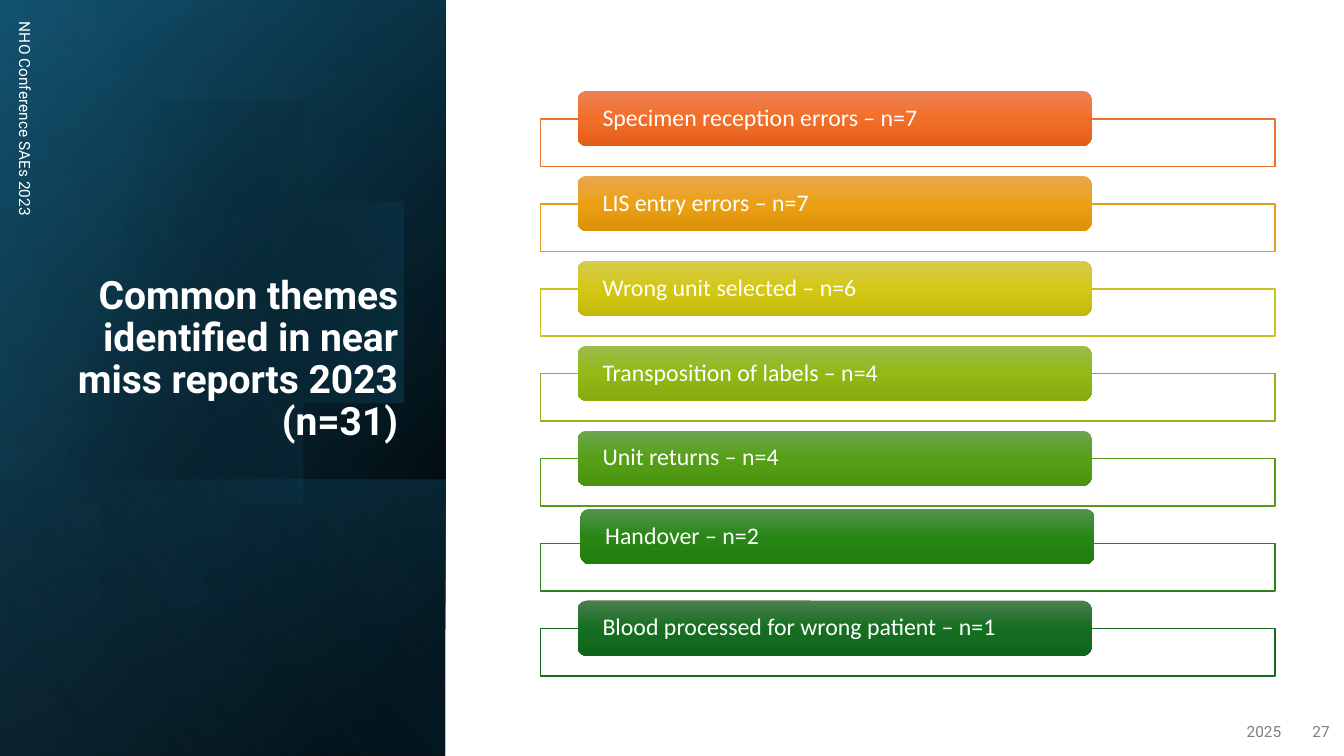
from math import acos, cos, sin
from pptx import Presentation
from pptx.dml.color import RGBColor
from pptx.enum.shapes import MSO_SHAPE
from pptx.enum.text import MSO_ANCHOR, PP_ALIGN
from pptx.oxml import parse_xml
from pptx.oxml.ns import nsdecls
from pptx.util import Inches, Pt

WIDE, HIGH = Inches(13.33), Inches(7.5)
PANEL = (0, 0, 33.15, 100)
FOOT = (0, 63.47, 33.15, 36.53)
PITCH = 11.24  # row step, in percent of the slide height

THEMES = [
    ("Specimen reception errors – n=7", "E97132", ("ED8257", "F26E29", "E25F1A")),
    ("LIS entry errors – n=7", "E39D1F", ("E8A74F", "ECA015", "DD9108")),
    ("Wrong unit selected – n=6", "CBC11E", ("D5CB4E", "D4C815", "C4B90B")),
    ("Transposition of labels – n=4", "8EB21E", ("9CBD4E", "92B916", "85AB0D")),
    ("Unit returns – n=4", "56991D", ("6DA64E", "56A017", "4C930F")),
    ("Handover – n=2", "2C821B", ("53914E", "298716", "217C0F")),
    ("Blood processed for wrong patient – n=1", "196B24", ("4D7E50", "156F21", "0F661B")),
]
NUDGE = {"Handover – n=2": (0.2, -0.9)}


def tint(code):
    return RGBColor.from_string(code)


def frame(box, turned=False):
    """Turn a box in percent of the slide into lengths, before a quarter turn if turned."""
    x, y, w, h = box
    left, top = WIDE * x / 100, HIGH * y / 100
    width, height = WIDE * w / 100, HIGH * h / 100
    if turned:
        left, top = left + (width - height) / 2, top + (height - width) / 2
        width, height = height, width
    return [round(n) for n in (left, top, width, height)]


def blend(shape, stops, angle):
    """Fill with a gradient of (place, colour, opacity) stops, all in percent."""
    marks = "".join(
        f'<a:gs pos="{place * 1000}"><a:srgbClr val="{code}">'
        f'<a:alpha val="{alpha * 1000}"/></a:srgbClr></a:gs>'
        for place, code, alpha in stops)
    fill = parse_xml(
        f'<a:gradFill {nsdecls("a")} rotWithShape="1"><a:gsLst>{marks}</a:gsLst>'
        f'<a:lin ang="{angle * 60000}" scaled="0"/></a:gradFill>')
    shape._element.spPr.insert(2, fill)
    shape.line.fill.background()
    shape.shadow.inherit = False


def layer(slide, box, stops, angle):
    """Add a gradient sheet that is mirrored and turned a quarter."""
    sheet = slide.shapes.add_shape(MSO_SHAPE.RECTANGLE, *frame(box, True))
    sheet.rotation = 90
    sheet._element.spPr.xfrm.set("flipH", "1")
    blend(sheet, stops, angle)


def disc(slide):
    """Add the circle that the slide's left edge cuts."""
    mid, level, radius = 1.45, 3.38, 2.28
    limit, steps = acos(-mid / radius), 90
    turns = [limit * (2 * i / steps - 1) for i in range(steps + 1)]
    dots = [(mid + radius * cos(t), level + radius * sin(t)) for t in turns]
    pen = slide.shapes.build_freeform(*dots[0], scale=Inches(1))
    pen.add_line_segments(dots[1:], close=True)
    blend(pen.convert_to_shape(), [(29, "000000", 0), (100, "156082", 43)], 14)


def style(run, size, font, code, bold=False):
    run.font.size, run.font.name, run.font.bold = Pt(size), font, bold
    run.font.color.rgb = tint(code)


def title(slide, lines):
    head = slide.shapes.title
    head.left, head.top, head.width, head.height = frame((4.8, 24.53, 25.58, 34.93))
    text = head.text_frame
    text.word_wrap, text.vertical_anchor = True, MSO_ANCHOR.BOTTOM
    para = text.paragraphs[0]
    para.alignment, para.line_spacing = PP_ALIGN.RIGHT, 0.9
    for i, line in enumerate(lines):
        if i:
            para.add_line_break()
        run = para.add_run()
        run.text = line
        style(run, 27.9, "Roboto", "FFFFFF", True)


def note(slide, box, words, code, align=PP_ALIGN.RIGHT, turned=False):
    label = slide.shapes.add_textbox(*frame(box, turned))
    label.rotation = 90 if turned else 0
    text = label.text_frame
    text.word_wrap, text.vertical_anchor = True, MSO_ANCHOR.MIDDLE
    para = text.paragraphs[0]
    para.alignment, para.space_after = align, Pt(6)
    run = para.add_run()
    run.text = words
    style(run, 11, "Roboto", code)


def theme(slide, row, words, edge, shades):
    """Add one row: an outlined strip with a shaded bar on it."""
    drop = row * PITCH
    strip = slide.shapes.add_shape(
        MSO_SHAPE.RECTANGLE, *frame((40.2, 15.73 + drop, 54.68, 6.27)))
    strip.fill.solid()
    strip.fill.fore_color.rgb = tint("FFFFFF")
    strip.line.color.rgb, strip.line.width = tint(edge), Pt(1)
    strip.shadow.inherit = False

    right, down = NUDGE.get(words, (0, 0))
    bar = slide.shapes.add_shape(
        MSO_SHAPE.ROUNDED_RECTANGLE,
        *frame((42.98 + right, 12 + drop + down, 38.25, 7.33)))
    blend(bar, [(50 * i, code, 100) for i, code in enumerate(shades)], 90)
    text = bar.text_frame
    text.word_wrap, text.vertical_anchor = True, MSO_ANCHOR.MIDDLE
    text.margin_left = text.margin_right = Inches(0.22)
    text.margin_top = text.margin_bottom = 0
    para = text.paragraphs[0]
    para.alignment, para.line_spacing = PP_ALIGN.LEFT, 0.9
    run = para.add_run()
    run.text = words
    style(run, 17, "Calibri", "FFFFFF")


def main():
    deck = Presentation()
    deck.slide_width, deck.slide_height = WIDE, HIGH
    slide = deck.slides.add_slide(deck.slide_layouts[5])

    layer(slide, PANEL, [(8, "000000", 100), (100, "104862", 100)], 50)
    layer(slide, PANEL, [(0, "000000", 0), (99, "156082", 46)], 30)
    layer(slide, FOOT, [(2, "156082", 29), (100, "000000", 30)], 130)
    disc(slide)
    layer(slide, PANEL, [(0, "000000", 0), (99, "46B1E1", 11)], 120)

    title(slide, ["Common themes identified in near miss reports 2023", "(n=31)"])
    slide.shapes._spTree.append(slide.shapes.title._element)  # in front of the panel
    note(slide, (0.38, 1.6, 3, 60), "NHO Conference SAEs 2023", "FFFFFF",
         PP_ALIGN.LEFT, True)
    note(slide, (73.58, 94.13, 22.5, 5.33), "2025", "808080")
    note(slide, (96, 94.13, 3.68, 5.33), "27", "808080")
    for row, item in enumerate(THEMES):
        theme(slide, row, *item)
    deck.save("out.pptx")


if __name__ == "__main__":
    main()
